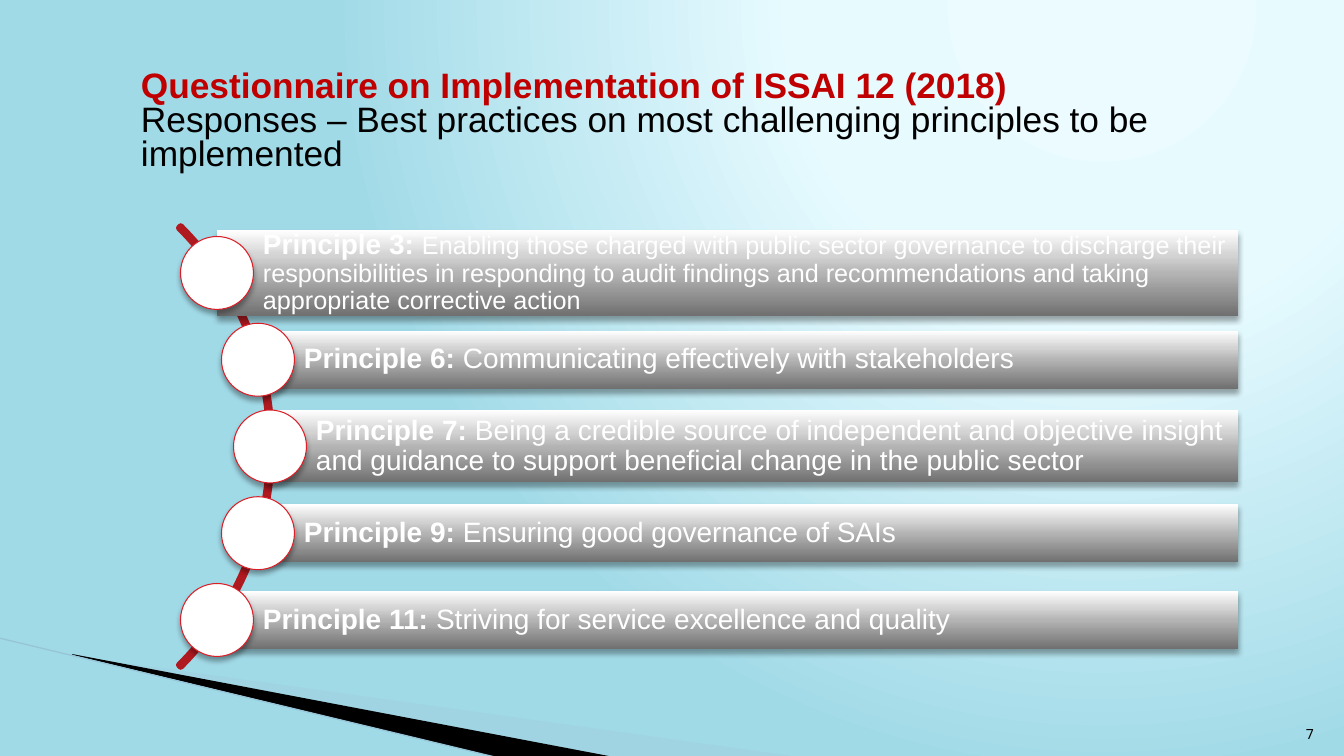
from lxml.etree import SubElement
from pptx import Presentation
from pptx.dml.color import RGBColor
from pptx.enum.shapes import MSO_CONNECTOR, MSO_SHAPE
from pptx.enum.text import MSO_ANCHOR, PP_ALIGN
from pptx.oxml import parse_xml
from pptx.oxml.ns import nsdecls, qn
from pptx.util import Pt

PX = 914400 / 100.8
COLORS = {name: RGBColor.from_string(value) for name, value in {
    "title": "C00000", "black": "000000", "white": "FFFFFF", "arc": "AF1920",
    "ring": "DA1F28", "wedge": "A0CBDC", "edge": "97C5D8"}.items()}
SKY = [(0, "EBFBFF"), (40, "E7FBFF"), (100, "A1DAE7")]
STEEL = [(0, "707070"), (50, "B4B4B4"), (70, "D3D3D3"), (100, "FFFFFF")]
PRINCIPLES = [  # label, text, text size, bar left, bar height
    ("Principle 3: ", "Enabling those charged with public sector governance to discharge "
     "their responsibilities in responding to audit findings and recommendations and "
     "taking appropriate corrective action", 18, 217, 86),
    ("Principle 6: ", "Communicating effectively with stakeholders", 20, 258, 58),
    ("Principle 7: ", "Being a credible source of independent and objective insight and "
     "guidance to support beneficial change in the public sector", 20, 270, 72),
    ("Principle 9: ", "Ensuring good governance of SAIs", 20, 258, 58),
    ("Principle 11: ", "Striving for service excellence and quality", 20, 217, 58),
]
BAR_RIGHT, CIRCLE, FIRST_Y, LAST_Y = 1238, 73, 273, 620


def px(*lengths):
    return [round(length * PX) for length in lengths]


def apply_gradient(fill, holder, stops, shading):
    """Replace the fill inside its XML holder by a gradient with any number of stops."""
    fill.solid()
    marks = "".join(f'<a:gs pos="{pos * 1000}"><a:srgbClr val="{color}"/></a:gs>'
                    for pos, color in stops)
    holder.replace(holder.find(qn("a:solidFill")), parse_xml(
        f'<a:gradFill {nsdecls("a")} rotWithShape="1"><a:gsLst>{marks}</a:gsLst>'
        f"{shading}</a:gradFill>"))


prs = Presentation()
prs.slide_width, prs.slide_height = px(1344, 756)
slide = prs.slides.add_slide(prs.slide_layouts[6])
shapes = slide.shapes
background = slide.background.fill
background.solid()
apply_gradient(background, slide._element.cSld.bg.bgPr, SKY,
               '<a:path path="circle"><a:fillToRect l="65000" b="98000"/></a:path>')

# Corner decoration
for color, alpha, (start, *rest) in [
    ("wedge", 40, [(74, 656), (799, 757), (613, 757), (74, 655)]),
    ("black", 100, [(72, 654), (614, 757), (500, 758), (73, 655)]),
]:
    builder = shapes.build_freeform(*start, scale=PX)
    builder.add_line_segments(rest)
    wedge = builder.convert_to_shape()
    wedge.shadow.inherit = False
    wedge.fill.solid()
    wedge.fill.fore_color.rgb = COLORS[color]
    wedge.line.fill.background()
    if alpha < 100:
        tint = wedge._element.spPr.find(qn("a:solidFill"))[0]
        SubElement(tint, qn("a:alpha"), val=str(alpha * 1000))

edge = shapes.add_connector(MSO_CONNECTOR.STRAIGHT, *px(-1, 638, 499, 758))
edge.line.color.rgb = COLORS["edge"]
edge.line.width = Pt(0.95)
SubElement(edge._element.spPr, qn("a:effectLst"))

# Arc behind the principles
arc = shapes.add_shape(MSO_SHAPE.BLOCK_ARC, *px(-351, 135, 623, 623))
for index, value in enumerate((189, 27, 0.004)):
    arc.adjustments[index] = value
arc.shadow.inherit = False
arc.fill.background()
arc.line.color.rgb = COLORS["arc"]
arc.line.width = Pt(4.33)

# Each bar starts at the centre of its circle
for row, (label, text, size, left, height) in enumerate(PRINCIPLES):
    middle = FIRST_Y + (LAST_Y - FIRST_Y) * row / (len(PRINCIPLES) - 1)
    bar = shapes.add_shape(MSO_SHAPE.RECTANGLE,
                           *px(left, middle - height / 2, BAR_RIGHT - left, height))
    apply_gradient(bar.fill, bar._element.spPr, STEEL, '<a:lin ang="16200000" scaled="0"/>')
    bar.line.fill.background()
    frame = bar.text_frame
    frame.word_wrap = True
    frame.vertical_anchor = MSO_ANCHOR.MIDDLE
    frame.margin_left, frame.margin_top, frame.margin_right, frame.margin_bottom = px(46, 6, 6, 6)
    principle = frame.paragraphs[0]
    principle.alignment = PP_ALIGN.LEFT
    principle.line_spacing = 0.9
    principle.font.name = "Arial"
    principle.font.color.rgb = COLORS["white"]
    for words, points, bold in ((label, 20, True), (text, size, False)):
        run = principle.add_run()
        run.text = words
        run.font.size = Pt(points)
        run.font.bold = bold

    circle = shapes.add_shape(MSO_SHAPE.OVAL,
                              *px(left - CIRCLE / 2, middle - CIRCLE / 2, CIRCLE, CIRCLE))
    circle.fill.solid()
    circle.fill.fore_color.rgb = COLORS["white"]
    circle.line.color.rgb = COLORS["ring"]
    circle.line.width = Pt(0.75)

    for raised in (bar, circle):
        raised.shadow.inherit = False
        shadow = SubElement(raised._element.spPr.find(qn("a:effectLst")), qn("a:outerShdw"),
                            blurRad=str(Pt(4)), dist=str(Pt(3)), dir="5400000", rotWithShape="0")
        shade = SubElement(shadow, qn("a:srgbClr"), val=str(COLORS["black"]))
        SubElement(shade, qn("a:alpha"), val="35000")

# Slide number
number_box = shapes.add_textbox(*px(1271, 707, 53, 40)).text_frame
number_box.word_wrap = True
number_box.vertical_anchor = MSO_ANCHOR.BOTTOM
number = number_box.paragraphs[0]
number.text = "7"
number.alignment = PP_ALIGN.RIGHT
number.font.name = "Noto Sans Mono"
number.font.size = Pt(10)
number.font.color.rgb = COLORS["black"]

# Title
title_box = shapes.add_textbox(*px(131, 66, 1154, 112)).text_frame
title_box.word_wrap = True
title_box.vertical_anchor = MSO_ANCHOR.MIDDLE
title = title_box.paragraphs[0]
title.line_spacing = 0.8
title.font.name = "Arial"
title.font.size = Pt(25.2)
heading = title.add_run()
heading.text = "Questionnaire on Implementation of ISSAI 12 (2018)"
heading.font.bold = True
heading.font.color.rgb = COLORS["title"]
title.add_line_break()
subheading = title.add_run()
subheading.text = "Responses – Best practices on most challenging principles to be implemented"
subheading.font.color.rgb = COLORS["black"]

prs.save("out.pptx")
